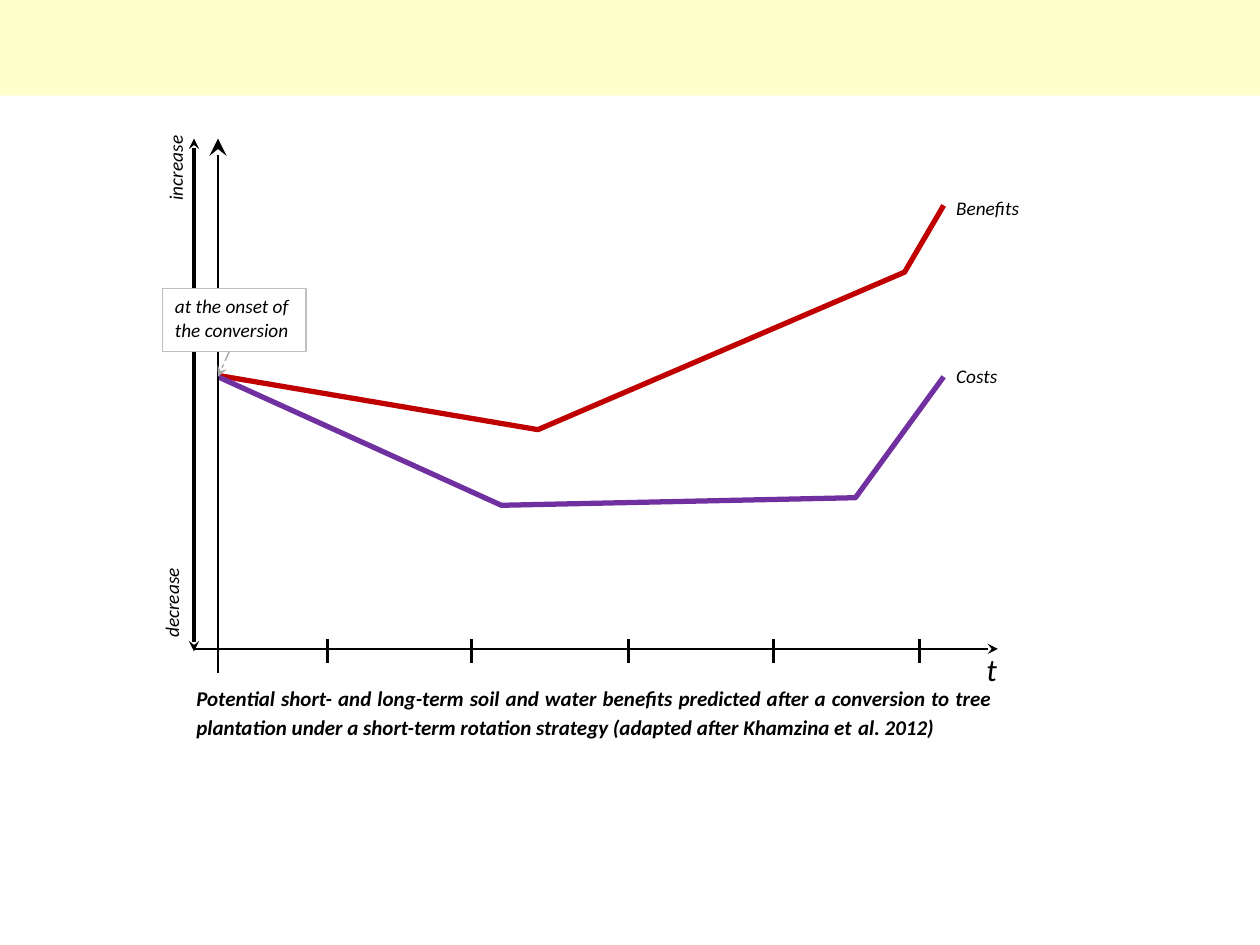
import pptx
import pptx.util
import pptx.dml.color
import pptx.enum.dml
import pptx.enum.shapes
import pptx.enum.text
import pptx.oxml

WIDE, HIGH = 10, 7.5
HUE = {"band": "FFFFCC", "gain": "C00000", "cost": "7030A0", "ink": "000000",
       "paper": "FFFFFF", "edge": "BFBFBF", "hint": "A5A5A5"}

# Places are in inches: one column or row of the slide grid per inch.
LEFT, RIGHT, TOP, BASE = 1.54, 7.92, 1.1, 5.15
ZERO, END, START = 1.73, 7.49, 2.99
TICKS = [2.6, 3.74, 4.99, 6.14, 7.3]
TICK = (5.07, 5.26)
CURVES = [
    ("gain", [(ZERO, 2.98), (4.27, 3.41), (7.18, 2.16), (END, 1.63)]),
    ("cost", [(ZERO, START), (3.98, 4.01), (6.79, 3.95), (END, START)]),
]
LABELS = [
    ("Benefits", (END, 1.51, 0.8, 0.3), {}),
    ("Costs", (END, 2.84, 0.8, 0.36), {}),
    ("t", (7.73, 5.11, 0.32, 0.35), {"size": 18}),
    ("increase", (1.01, 1.16, 0.77, 0.29), {"turn": 270}),
    ("decrease", (0.98, 4.63, 0.77, 0.29), {"turn": 270}),
]
CAPTION = [
    ("Potential short- and long-term soil and water benefits predicted after a "
     "conversion to tree plantation under a short-term rotation strategy "
     "(adapted after Khamzina et", 12),
    (" ", 14),
    ("al. 2012)", 12),
]
NOTE = ("at the onset of the conversion", (1.29, 2.29, 1.14, 0.5))

deck = pptx.Presentation()
deck.slide_width = pptx.util.Inches(WIDE)
deck.slide_height = pptx.util.Inches(HIGH)
slide = deck.slides.add_slide(deck.slide_layouts[6])
shapes = slide.shapes


def rgb(name):
    return pptx.dml.color.RGBColor.from_string(HUE[name])


def emu(*values):
    return [pptx.util.Inches(v) for v in values]


def element(tag, **values):
    """Make an element of the drawing namespace."""
    item = pptx.oxml.parse_xml(
        f'<a:{tag} xmlns:a="http://schemas.openxmlformats.org/drawingml/2006/main"/>')
    for key, value in values.items():
        item.set(key, value)
    return item


def rect(place, fill, edge=None):
    box = shapes.add_shape(pptx.enum.shapes.MSO_SHAPE.RECTANGLE, *emu(*place))
    box.shadow.inherit = False
    box.fill.solid()
    box.fill.fore_color.rgb = rgb(fill)
    if edge:
        box.line.color.rgb = rgb(edge)
        box.line.width = pptx.util.Pt(0.75)
    else:
        box.line.fill.background()
    return box


def write(text, place, box=None, size=11, bold=False, turn=0, align="LEFT"):
    """Put a string, or a list of (string, size) runs, in a box."""
    box = box or shapes.add_textbox(*emu(*place))
    box.rotation = turn
    frame = box.text_frame
    frame.word_wrap = True
    frame.vertical_anchor = pptx.enum.text.MSO_ANCHOR.TOP
    para = frame.paragraphs[0]
    para.alignment = pptx.enum.text.PP_ALIGN[align]
    for part, points in [(text, size)] if isinstance(text, str) else text:
        run = para.add_run()
        run.text = part
        font = run.font
        font.name, font.size = "Calibri", pptx.util.Pt(points)
        font.italic, font.bold = True, bold
        font.color.rgb = rgb("ink")


def line(start, stop, width=1.5, color="ink", head=None, tail=None, dash=False):
    """Draw a line; head and tail give arrow sizes at start and stop."""
    rule = shapes.add_connector(
        pptx.enum.shapes.MSO_CONNECTOR.STRAIGHT, *emu(*start, *stop))
    rule.line.color.rgb = rgb(color)
    rule.line.width = pptx.util.Pt(width)
    if dash:
        rule.line.dash_style = pptx.enum.dml.MSO_LINE.LONG_DASH
    stroke = rule.line._get_or_add_ln()
    for tag, size in (("headEnd", head), ("tailEnd", tail)):
        if size:
            stroke.append(element(tag, type="stealth", w=size, len=size))
    rule._element.spPr.append(element("effectLst"))


def curve(color, points):
    first, *rest = [emu(*point) for point in points]
    pen = shapes.build_freeform(*first)
    pen.add_line_segments(rest, close=False)
    path = pen.convert_to_shape()
    path.shadow.inherit = False
    path.fill.background()
    path.line.color.rgb = rgb(color)
    path.line.width = pptx.util.Pt(3)


rect((0, -0.03, WIDE, 0.79), "band")
for color, points in CURVES:
    curve(color, points)

line((RIGHT, BASE), (LEFT, BASE), head="med")
for x in TICKS:
    line((x, TICK[0]), (x, TICK[1]))
line((ZERO, TOP), (ZERO, 5.34), head="lg")
line((LEFT, TOP), (LEFT, 5.17), width=2, head="med", tail="med")

for text, place, form in LABELS:
    write(text, place, **form)
write(CAPTION, (1.46, 5.39, 6.51, 0.6), bold=True, align="JUSTIFY")

text, place = NOTE
write(text, place, box=rect(place, "paper", "edge"))
line((1.82, 2.79), (ZERO, START), width=0.75, color="hint", tail="med", dash=True)

deck.save("out.pptx")
